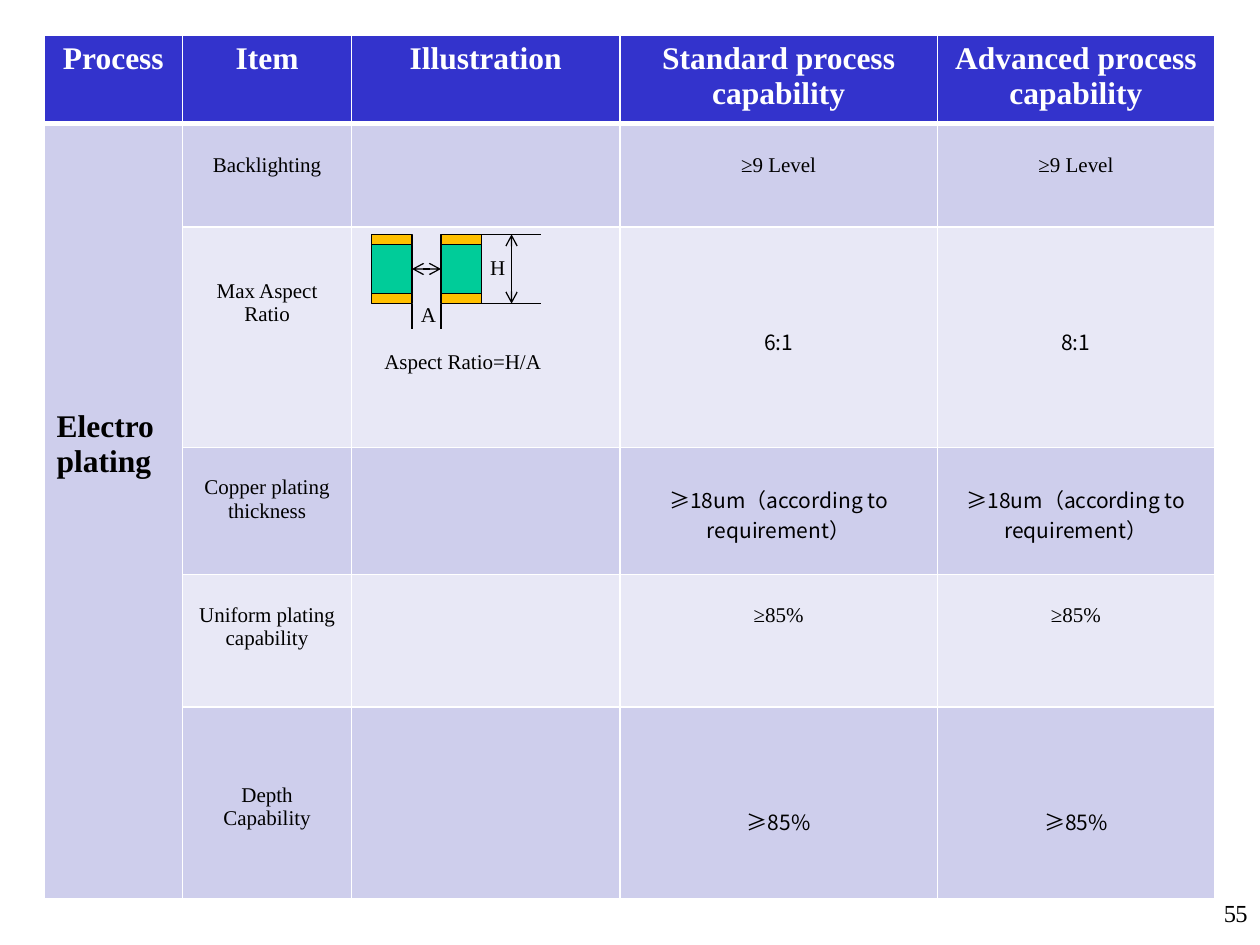
from lxml import etree
from pptx import Presentation
from pptx import util as u
from pptx.dml import color
from pptx.enum import shapes, text
from pptx.oxml import ns

COLORS = {
    "header": "3333CC", "dark": "CECEEC", "light": "E8E8F6", "white": "FFFFFF",
    "black": "000000", "core": "00CC99", "copper": "FFC000",
}
SERIF, SANS = "Times New Roman", "Noto Sans CJK SC"
HEADINGS = ["Process", "Item", "Illustration",
            "Standard process capability", "Advanced process capability"]
PROCESS = "Electroplating"
PROCESS_TOP = 2.27
THICKNESS = "≥18um（according to requirement）"
ITEMS = [
    ("Backlighting", 0.24, "≥9 Level", "≥9 Level", SERIF, 0.24),
    ("Max Aspect Ratio", 0.42, "6:1", "8:1", SANS, 0.79),
    ("Copper plating thickness", 0.23, THICKNESS, THICKNESS, SANS, 0.29),
    ("Uniform plating capability", 0.23, "≥85%", "≥85%", SERIF, 0.23),
    ("Depth Capability", 0.61, "≥85%", "≥85%", SANS, 0.79),
]
LABELS = [("H", 1.0), ("A", 0.45), ("Aspect Ratio=H/A", 0.16)]
COLUMNS = [1.1, 1.34, 2.13, 2.52, 2.2]
ROWS = [0.65, 0.82, 1.75, 1.01, 1.05, 1.52]
TABLE_LEFT, TABLE_TOP = 0.35, 0.28
PAD_X, PAD_TOP, PAD_WIDTH = (2.95, 3.5), 1.86, 0.32
COPPER, CORE = 0.08, 0.39
PAGE_NUMBER = "5"
NUMBER_LEFTS = (7.83, 7.92)


def rgb(name):
    return color.RGBColor.from_string(COLORS[name])


def write(para, words, size=12, font=SERIF, ink="black", bold=False,
          align=text.PP_ALIGN.CENTER, indent=0, before=0):
    para.alignment = align
    para.space_before = u.Pt(before)
    if indent:
        properties = para._p.get_or_add_pPr()
        properties.set("marL", str(u.Inches(indent)))
        properties.set("indent", "0")
    span = para.add_run()
    span.text = words
    span.font.size, span.font.bold, span.font.name = u.Pt(size), bold, font
    span.font.color.rgb = rgb(ink)
    east_asian = etree.SubElement(span._r.get_or_add_rPr(), ns.qn("a:ea"))
    east_asian.set("typeface", font)


def style_cell(cell, fill, row):
    properties = cell._tc.get_or_add_tcPr()
    for side in "LRTB":
        heavy = (row, side) in ((0, "B"), (1, "T"))
        border = etree.SubElement(properties, ns.qn("a:ln" + side),
                                  w=str(u.Pt(3 if heavy else 1)))
        solid = etree.SubElement(border, ns.qn("a:solidFill"))
        etree.SubElement(solid, ns.qn("a:srgbClr"), val=COLORS["white"])
    cell.fill.solid()
    cell.fill.fore_color.rgb = rgb(fill)


def fill_cell(cell, words, top=0.05, **style):
    cell.margin_top = u.Inches(top)
    write(cell.text_frame.paragraphs[0], words, **style)


def add_table(page):
    frame = page.shapes.add_table(
        len(ROWS), len(COLUMNS), u.Inches(TABLE_LEFT), u.Inches(TABLE_TOP),
        u.Inches(sum(COLUMNS)), u.Inches(sum(ROWS)))
    table = frame.table
    for column, width in zip(table.columns, COLUMNS):
        column.width = u.Inches(width)
    for row, height in zip(table.rows, ROWS):
        row.height = u.Inches(height)
    for r in range(len(ROWS)):
        for c in range(len(COLUMNS)):
            band = "dark" if r % 2 or c == 0 else "light"
            style_cell(table.cell(r, c), band if r else "header", r)
    for c, heading in enumerate(HEADINGS):
        fill_cell(table.cell(0, c), heading, size=18, ink="white", bold=True)
    table.cell(1, 0).merge(table.cell(len(ROWS) - 1, 0))
    fill_cell(table.cell(1, 0), PROCESS, top=PROCESS_TOP, size=18, bold=True,
              align=text.PP_ALIGN.LEFT)
    for r, (item, item_top, standard, advanced, font, top) in enumerate(ITEMS, 1):
        fill_cell(table.cell(r, 1), item, top=item_top)
        for c, value in ((3, standard), (4, advanced)):
            fill_cell(table.cell(r, c), value, top=top, font=font)
        if r != 2:
            table.cell(r, 2).text_frame.paragraphs[0].font.size = u.Pt(12)
    drawing = table.cell(2, 2)
    drawing.margin_top = u.Inches(0.24)
    for i, (label, indent) in enumerate(LABELS):
        body = drawing.text_frame
        para = body.add_paragraph() if i else body.paragraphs[0]
        write(para, label, align=text.PP_ALIGN.LEFT, indent=indent,
              before=13.5 if i else 0)


def add_block(page, left, top, height, fill):
    block = page.shapes.add_shape(
        shapes.MSO_SHAPE.RECTANGLE, *map(u.Inches, (left, top, PAD_WIDTH, height)))
    block.shadow.inherit = False
    block.fill.solid()
    block.fill.fore_color.rgb = rgb(fill)
    block.line.color.rgb = rgb("black")
    block.line.width = u.Pt(0.75)
    return block


def add_line(page, x1, y1, x2, y2, arrows=False):
    line = page.shapes.add_connector(
        shapes.MSO_CONNECTOR.STRAIGHT, *map(u.Inches, (x1, y1, x2, y2)))
    line.line.color.rgb = rgb("black")
    line.line.width = u.Pt(0.75)
    if arrows:
        outline = line.line._get_or_add_ln()
        for end in ("a:headEnd", "a:tailEnd"):
            etree.SubElement(outline, ns.qn(end), type="arrow")
    etree.SubElement(line._element.spPr, ns.qn("a:effectLst"))
    return line


def add_hole_diagram(page):
    core_top = PAD_TOP + COPPER
    bottom = core_top + CORE + COPPER
    cores = [add_block(page, x, core_top, CORE, "core") for x in PAD_X]
    for x in PAD_X:
        for y in (PAD_TOP, core_top + CORE):
            add_block(page, x, y, COPPER, "copper")
    hole_left, hole_right = PAD_X[0] + PAD_WIDTH, PAD_X[1]
    edge = PAD_X[1] + PAD_WIDTH
    for y in (PAD_TOP, bottom):
        add_line(page, edge, y, edge + 0.47, y)
    add_line(page, edge + 0.24, PAD_TOP, edge + 0.24, bottom, arrows=True)
    for x in (hole_left, hole_right):
        add_line(page, x, bottom + 0.2, x, bottom)
    middle = core_top + CORE / 2
    gap = add_line(page, hole_left, middle, hole_right, middle, arrows=True)
    gap.begin_connect(cores[0], 3)
    gap.end_connect(cores[1], 1)


def main():
    deck = Presentation()
    deck.slide_width, deck.slide_height = u.Inches(10), u.Inches(7.5)
    page = deck.slides.add_slide(deck.slide_layouts[6])
    for left in NUMBER_LEFTS:
        box = page.shapes.add_textbox(*map(u.Inches, (left, 7.08, 2.08, 0.5)))
        box.text_frame.word_wrap = True
        write(box.text_frame.paragraphs[0], PAGE_NUMBER, size=14,
              align=text.PP_ALIGN.RIGHT)
    add_table(page)
    add_hole_diagram(page)
    deck.save("out.pptx")


if __name__ == "__main__":
    main()
